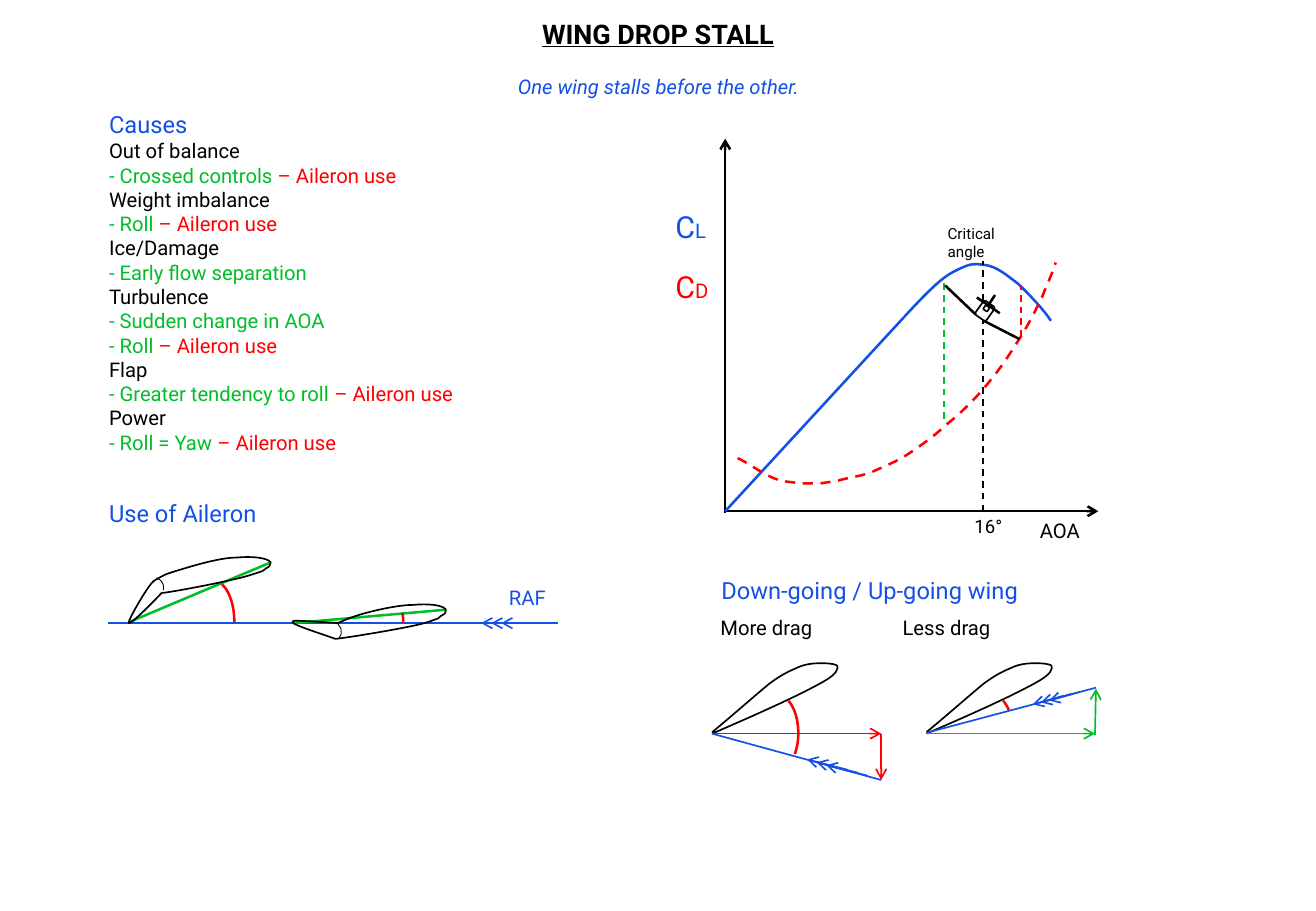
from dataclasses import dataclass
from itertools import chain

from lxml.etree import SubElement
from pptx import Presentation
from pptx.dml.color import RGBColor
from pptx.enum.dml import MSO_LINE
from pptx.enum.shapes import MSO_CONNECTOR, MSO_SHAPE
from pptx.enum.text import MSO_ANCHOR, MSO_AUTO_SIZE, PP_ALIGN
from pptx.oxml.ns import qn
from pptx.util import Cm, Pt

BLACK, BLUE, GREEN, RED, WHITE = "000000", "1450E6", "00BE28", "FF0000", "FFFFFF"
Point = tuple[float, float]


@dataclass
class Span:
    text: str
    color: str = BLACK
    size: float = 12


@dataclass
class Label:
    x: float
    y: float
    w: float
    h: float
    paragraphs: list[list[Span]]
    gap: float = 0


@dataclass
class Line:
    x1: float
    y1: float
    x2: float
    y2: float
    color: str = BLACK
    width: float = 1
    dash: bool = False
    arrow: bool = False


@dataclass
class Chevrons:
    first: Line
    dx: float
    dy: float


@dataclass
class Curve:
    points: list[Point]
    color: str = BLACK
    width: float = 1
    dash: bool = False


@dataclass
class Preset:
    kind: MSO_SHAPE
    x: float
    y: float
    w: float
    h: float
    color: str = BLACK
    width: float = 1
    rotation: float = 0
    angles: Point | None = None
    flip: bool = False
    fill: str | None = None


def rgb(color: str) -> RGBColor:
    return RGBColor.from_string(color)


def style_line(line, color: str, width: float, dash: bool = False) -> None:
    line.color.rgb = rgb(color)
    line.width = Pt(width)
    if dash:
        line.dash_style = MSO_LINE.DASH


def draw_label(s, label: Label):
    sp = s.shapes.add_textbox(Cm(label.x), Cm(label.y), Cm(label.w), Cm(label.h))
    tf = sp.text_frame
    tf.word_wrap = True
    tf.auto_size = MSO_AUTO_SIZE.SHAPE_TO_FIT_TEXT
    for i, spans in enumerate(label.paragraphs):
        p = tf.add_paragraph() if i else tf.paragraphs[0]
        p.space_before = Pt(label.gap if i else 0)
        for span in spans:
            r = p.add_run()
            r.text = span.text
            r.font.name, r.font.size = "Roboto", Pt(span.size)
            r.font.color.rgb = rgb(span.color)
    return sp


def draw_line(s, line: Line) -> None:
    c = s.shapes.add_connector(MSO_CONNECTOR.STRAIGHT, Cm(line.x1), Cm(line.y1), Cm(line.x2), Cm(line.y2))
    style_line(c.line, line.color, line.width, line.dash)
    props = c._element.spPr
    if line.arrow:
        SubElement(props.find(qn("a:ln")), qn("a:tailEnd"), type="arrow")
    SubElement(props, qn("a:effectLst"))


def draw_chevrons(s, chevrons: Chevrons) -> None:
    f = chevrons.first
    for i in range(3):
        dx, dy = i * chevrons.dx, i * chevrons.dy
        draw_line(s, Line(f.x1 + dx, f.y1 + dy, f.x2 + dx, f.y2 + dy, BLUE, arrow=True))


def draw_curve(s, curve: Curve) -> None:
    start, *rest = [(Cm(x), Cm(y)) for x, y in curve.points]
    builder = s.shapes.build_freeform(*start)
    builder.add_line_segments(rest, close=False)
    sp = builder.convert_to_shape()
    outline = sp._element.find(".//" + qn("a:path"))
    segments = outline.findall(qn("a:lnTo"))
    for i in range(0, len(segments), 3):
        bezier = SubElement(outline, qn("a:cubicBezTo"))
        for segment in segments[i:i + 3]:
            bezier.append(segment[0])
            outline.remove(segment)
    sp.shadow.inherit = False
    sp.fill.background()
    style_line(sp.line, curve.color, curve.width, curve.dash)


def draw_preset(s, preset: Preset) -> None:
    sp = s.shapes.add_shape(preset.kind, Cm(preset.x), Cm(preset.y), Cm(preset.w), Cm(preset.h))
    sp.shadow.inherit = False
    sp.rotation = preset.rotation
    if preset.fill:
        sp.fill.solid()
        sp.fill.fore_color.rgb = rgb(preset.fill)
    else:
        sp.fill.background()
    style_line(sp.line, preset.color, preset.width)
    if preset.angles:
        sp.adjustments[0], sp.adjustments[1] = preset.angles
    if preset.flip:
        sp._element.spPr.find(qn("a:xfrm")).set("flipH", "1")


def wing(x: float, y: float) -> Curve:
    profile = [(0, 0), (.84, -.36), (1.68, -.74), (2.11, -.97), (2.54, -1.19), (2.59, -1.27), (2.62, -1.37),
               (2.67, -1.45), (2.44, -1.47), (2.31, -1.47), (2.18, -1.47), (2.01, -1.47), (1.83, -1.4),
               (1.65, -1.32), (1.5, -1.27), (1.19, -1.04), (.91, -.81), (.46, -.41), (0, -.03)]
    return Curve([(x + dx, y + dy) for dx, dy in profile])


def cause(name: str, *effects: tuple[str, bool]) -> list[list[Span]]:
    return [[Span(name)]] + [[Span(f"- {text}{' ' if aileron else ''}", GREEN)]
                             + ([Span("– Aileron use", RED)] if aileron else []) for text, aileron in effects]


CAUSES = [[Span("Causes", BLUE, 14)], *chain(
    cause("Out of balance", ("Crossed controls", True)),
    cause("Weight imbalance", ("Roll", True)),
    cause("Ice/Damage", ("Early flow separation", False)),
    cause("Turbulence", ("Sudden change in AOA", False), ("Roll", True)),
    cause("Flap", ("Greater tendency to roll", True)),
    cause("Power", ("Roll = Yaw", True)))]
LIFT = [(18.9, 6.63), (19.51, 5.97), (19.74, 5.77), (20.02, 5.64), (20.29, 5.51), (20.35, 5.51), (20.57, 5.54),
        (20.83, 5.56), (21.06, 5.77), (21.29, 5.94), (21.51, 6.15), (21.84, 6.5), (21.97, 6.71)]
DRAG = [(15.42, 9.58), (15.57, 9.65), (15.72, 9.75), (15.85, 9.83), (16, 9.91), (16.1, 9.98), (16.26, 10.03),
        (16.38, 10.08), (16.59, 10.08), (16.74, 10.11), (16.89, 10.11), (17.02, 10.11), (17.15, 10.11),
        (17.3, 10.08), (17.42, 10.08), (17.6, 10.03), (17.78, 9.98), (17.98, 9.96), (18.21, 9.88),
        (18.42, 9.78), (18.64, 9.7), (18.9, 9.55), (19.18, 9.37), (19.51, 9.14), (19.81, 8.86),
        (20.12, 8.61), (20.47, 8.26), (20.73, 7.92), (20.98, 7.62), (21.18, 7.29), (21.36, 7.01),
        (21.54, 6.71), (21.67, 6.45), (21.79, 6.2), (21.89, 5.94), (22, 5.72), (22.07, 5.49)]
AILERON_UP = [(5.28, 12.01), (5.51, 11.94), (5.51, 11.94), (5.56, 11.89), (5.61, 11.86), (5.64, 11.86), (5.66, 11.76),
              (5.59, 11.66), (5.26, 11.63), (4.95, 11.66), (4.62, 11.66), (4.11, 11.81), (3.78, 11.91),
              (3.45, 12.01), (3.45, 12.01), (3.23, 12.14), (3.12, 12.19), (2.67, 12.98), (2.69, 13.03),
              (2.72, 13.06), (3.02, 12.78), (3.38, 12.4), (3.51, 12.4), (5, 12.12), (5.28, 12.01)]
AILERON_DOWN = [(8.97, 13), (9.17, 12.93), (9.19, 12.93), (9.22, 12.88), (9.27, 12.85), (9.32, 12.85), (9.32, 12.75),
                (9.27, 12.65), (8.94, 12.62), (8.64, 12.65), (8.31, 12.65), (7.75, 12.78), (7.44, 12.88),
                (7.16, 12.98), (7.54, 12.83), (7.06, 13.03), (6.63, 13), (6.6, 13), (6.22, 12.98),
                (5.82, 12.98), (6.6, 13.21), (7.01, 13.36), (7.11, 13.36), (8.69, 13.11), (8.97, 13)]
ARC, BODY = MSO_SHAPE.ARC, MSO_SHAPE.ROUNDED_RECTANGLE
GRAPH = [
    Label(2.03, 2.18, 11.02, 7.52, CAUSES),
    Line(15.16, 10.72, 15.16, 2.9, width=1.5, arrow=True), Line(15.16, 10.69, 22.96, 10.69, width=1.5, arrow=True),
    Line(15.16, 10.69, 18.9, 6.63, BLUE, 1.5), Curve(LIFT, BLUE, 1.5),
    Label(13.87, 4.22, 1.6, 2.39, [[Span("C", c, 18), Span(n, c)] for n, c in (("L", BLUE), ("D", RED))], 14),
    Line(20.55, 10.69, 20.55, 5.46, dash=True),
    Label(20.12, 10.64, 1.17, .74, [[Span("16°", size=11)]]),
    Label(19.56, 4.57, 2.29, 1.02, [[Span("Critical angle", size=9)]]),
    Line(19.74, 8.76, 19.74, 5.82, GREEN, dash=True), Line(21.34, 7.04, 21.34, 5.99, RED, dash=True),
    Label(21.49, 10.72, 3.2, .76, [[Span("AOA")]]), Curve(DRAG, RED, 1.5, True)]
AIRPLANE = [
    Line(20.57, 6.71, 21.31, 7.09, width=1.5), Preset(BODY, 20.45, 6.32, .28, .36, rotation=35.2, fill=WHITE),
    Line(20.42, 6.22, 20.9, 6.55, width=1.5), Preset(BODY, 20.57, 6.4, .1, .1, rotation=35.2, fill=WHITE),
    Line(19.76, 5.97, 20.4, 6.58, width=1.5), Line(20.8, 6.17, 20.65, 6.4, width=1.5)]
WINGS = [
    wing(19.37, 15.34), wing(14.89, 15.34),
    Line(14.88, 15.34, 18.42, 15.34, RED, arrow=True), Line(18.42, 15.34, 18.42, 16.31, RED, arrow=True),
    Line(14.88, 15.34, 18.42, 16.31, BLUE), Chevrons(Line(17.73, 16.1, 16.87, 15.88), .2, .06),
    Preset(ARC, 15.8, 14.53, .89, 1.6, RED, 1.5, angles=(173.64, 29.91)),
    Line(19.35, 15.34, 22.89, 15.34, GREEN, arrow=True), Line(22.89, 15.37, 22.91, 14.4, GREEN, arrow=True),
    Line(19.38, 15.32, 22.91, 14.38, BLUE), Chevrons(Line(22.23, 14.55, 21.59, 14.73), .17, -.04),
    Preset(ARC, 20.29, 14.53, .89, 1.6, RED, 1.5, angles=(173.64, 183.75)),
    Label(14.83, 11.91, 8.59, .86, [[Span("Down-going / Up-going wing", BLUE, 14)]])]
AILERONS = [
    Label(2.03, 10.31, 5.74, .86, [[Span("Use of Aileron", BLUE, 14)]]),
    Line(2.72, 13, 5.66, 11.76, GREEN, 1.5), Line(2.26, 13.03, 11.66, 13.03, BLUE),
    Line(6.12, 13.03, 9.32, 12.75, GREEN, 1.5),
    Preset(ARC, 4.01, 12.14, .89, 1.73, RED, 1.5, angles=(169.9, 0)),
    Preset(ARC, 7.54, 12.22, .89, 1.6, RED, 1.5, angles=(200.82, 0)),
    Chevrons(Line(10.85, 13.03, 10.06, 13.03), .21, 0), Label(10.39, 12.12, 1.85, .76, [[Span("RAF", BLUE)]]),
    Curve(AILERON_UP), Preset(ARC, 3, 12.09, .43, .41, width=.5, rotation=102.8, flip=True),
    Curve(AILERON_DOWN), Preset(ARC, 6.73, 13, .41, .41, width=.5, rotation=130.5, flip=True)]
DRAW = {Label: draw_label, Line: draw_line, Chevrons: draw_chevrons, Curve: draw_curve, Preset: draw_preset}


def main() -> None:
    prs = Presentation()
    prs.slide_width, prs.slide_height = Cm(27.51), Cm(19.05)
    s = prs.slides.add_slide(prs.slide_layouts[5])
    title = s.shapes.title
    title.left, title.top, title.width, title.height = Cm(0), Cm(.23), Cm(27.51), Cm(.94)
    tf = title.text_frame
    tf.text = "WING DROP STALL"
    tf.vertical_anchor, tf.auto_size = MSO_ANCHOR.TOP, MSO_AUTO_SIZE.NONE
    tf.paragraphs[0].alignment = PP_ALIGN.CENTER
    font = tf.paragraphs[0].runs[0].font
    font.name, font.size, font.bold, font.underline = "Roboto", Pt(16), True, True
    font.color.rgb = rgb(BLACK)
    for item in GRAPH + AIRPLANE + WINGS + AILERONS:
        DRAW[type(item)](s, item)
    drag = draw_label(s, Label(14.81, 12.75, 8.81, .76, [[Span("More drag\tLess drag")]]))
    tabs = SubElement(drag.text_frame.paragraphs[0]._p.get_or_add_pPr(), qn("a:tabLst"))
    SubElement(tabs, qn("a:tab"), pos=str(Cm(3.81)), algn="l")
    p = draw_label(s, Label(4.7, 1.42, 18.14, .76, [[Span("One wing stalls before the other.", BLUE)]])).text_frame.paragraphs[0]
    p.alignment = PP_ALIGN.CENTER
    p.runs[0].font.italic = True
    prs.save("out.pptx")


if __name__ == "__main__":
    main()
